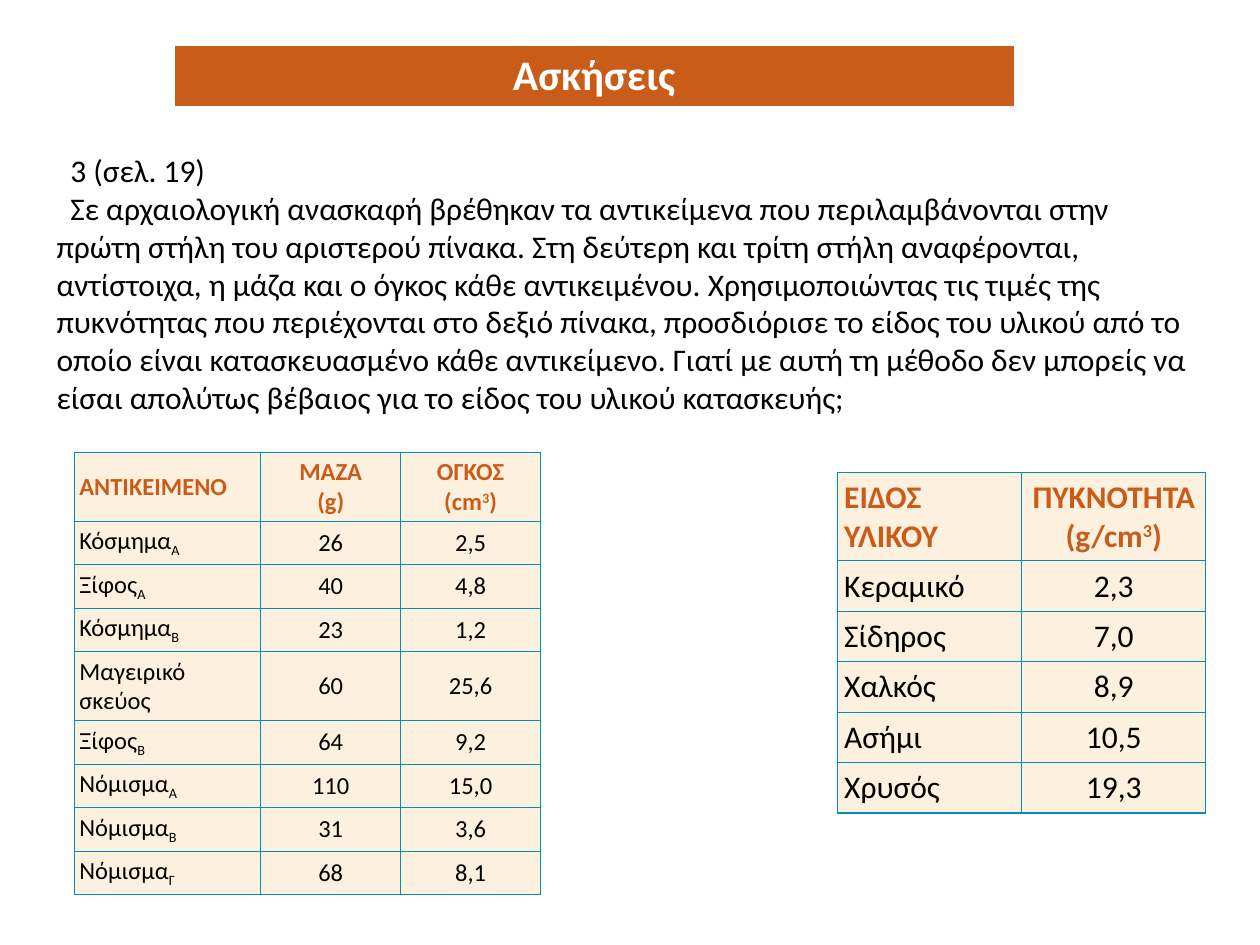
import pptx
import pptx.dml.color
import pptx.enum.text
import pptx.oxml
import pptx.oxml.ns
import pptx.util
from dataclasses import dataclass

Inches = pptx.util.Inches
Align = pptx.enum.text.PP_ALIGN


@dataclass(frozen=True)
class Theme:
    font: str = "Calibri"
    accent: str = "C85C18"
    cream: str = "FEF0DE"
    border: str = "0091B2"
    ink: str = "000000"
    white: str = "FFFFFF"
    title_size: int = 24
    body_size: int = 18
    small_size: int = 14
    border_width: float = 0.75
    superscript: int = 30000
    subscript: int = -25000


THEME = Theme()

# Content: a tuple cell alternates normal and raised (header) or lowered (body) text
TITLE = "Ασκήσεις"
EXERCISE = [
    "3 (σελ. 19)",
    "Σε αρχαιολογική ανασκαφή βρέθηκαν τα αντικείμενα που περιλαμβάνονται στην "
    "πρώτη στήλη του αριστερού πίνακα. Στη δεύτερη και τρίτη στήλη αναφέρονται, "
    "αντίστοιχα, η μάζα και ο όγκος κάθε αντικειμένου. Χρησιμοποιώντας τις τιμές της "
    "πυκνότητας που περιέχονται στο δεξιό πίνακα, προσδιόρισε το είδος του υλικού από το "
    "οποίο είναι κατασκευασμένο κάθε αντικείμενο. Γιατί με αυτή τη μέθοδο δεν μπορείς να "
    "είσαι απολύτως βέβαιος για το είδος του υλικού κατασκευής;",
]
OBJECTS = [
    ("ΑΝΤΙΚΕΙΜΕΝΟ", "ΜΑΖΑ\n(g)", ("ΟΓΚΟΣ\n(cm", "3", ")")),
    (("Κόσμημα", "Α"), "26", "2,5"),
    (("Ξίφος", "Α"), "40", "4,8"),
    (("Κόσμημα", "Β"), "23", "1,2"),
    ("Μαγειρικό σκεύος", "60", "25,6"),
    (("Ξίφος", "Β"), "64", "9,2"),
    (("Νόμισμα", "Α"), "110", "15,0"),
    (("Νόμισμα", "Β"), "31", "3,6"),
    (("Νόμισμα", "Γ"), "68", "8,1"),
]
MATERIALS = [
    ("ΕΙΔΟΣ ΥΛΙΚΟΥ", ("ΠΥΚΝΟΤΗΤΑ\n(g/cm", "3", ")")),
    ("Κεραμικό", "2,3"),
    ("Σίδηρος", "7,0"),
    ("Χαλκός", "8,9"),
    ("Ασήμι", "10,5"),
    ("Χρυσός", "19,3"),
]


def rgb(color):
    return pptx.dml.color.RGBColor.from_string(color)


def style_font(font, size, color, bold=False):
    font.name = THEME.font
    font.size = pptx.util.Pt(size)
    font.bold = bold
    font.color.rgb = rgb(color)


def add_borders(cell):
    properties = cell._tc.get_or_add_tcPr()
    width = pptx.util.Pt(THEME.border_width)
    for position, side in enumerate(("lnL", "lnR", "lnT", "lnB")):
        line = pptx.oxml.parse_xml(
            f'<a:{side} {pptx.oxml.ns.nsdecls("a")} w="{width}"><a:solidFill>'
            f'<a:srgbClr val="{THEME.border}"/></a:solidFill></a:{side}>')
        properties.insert(position, line)


def write_cell(cell, content, size, color, bold, shift):
    para = cell.text_frame.paragraphs[0]
    style_font(para.font, size, color, bold)
    pieces = (content,) if isinstance(content, str) else content
    for index, piece in enumerate(pieces):
        for line_number, line in enumerate(piece.split("\n")):
            if line_number:
                para.add_line_break()
            span = para.add_run()
            span.text = line
            style_font(span.font, size, color, bold)
            if index % 2:
                span.font._element.set("baseline", str(shift))
    return para


def add_table(page, rows, left, top, widths, heights, size, inset,
              header_color=THEME.accent, fill=THEME.cream, bordered=True):
    frame = page.shapes.add_table(
        len(rows), len(widths), Inches(left), Inches(top),
        Inches(sum(widths)), Inches(sum(heights)))
    table = frame.table
    table.first_row = table.horz_banding = False
    for column, width in zip(table.columns, widths):
        column.width = Inches(width)
    for row_index, (row, height) in enumerate(zip(rows, heights)):
        table.rows[row_index].height = Inches(height)
        header = row_index == 0
        color = header_color if header else THEME.ink
        shift = THEME.superscript if header else THEME.subscript
        for column_index, content in enumerate(row):
            cell = table.cell(row_index, column_index)
            cell.fill.solid()
            cell.fill.fore_color.rgb = rgb(fill)
            cell.vertical_anchor = pptx.enum.text.MSO_ANCHOR.MIDDLE
            cell.margin_left = cell.margin_right = Inches(inset)
            cell.margin_top = cell.margin_bottom = Inches(inset)
            para = write_cell(cell, content, size, color, header, shift)
            centred = column_index > 0 or len(row) == 1
            para.alignment = Align.CENTER if centred else Align.LEFT
            if bordered:
                add_borders(cell)


def add_exercise(page):
    box = page.shapes.add_textbox(Inches(0.35), Inches(1.15), Inches(9.21), Inches(2.22))
    box.text_frame.word_wrap = True
    for index, text in enumerate(EXERCISE):
        para = box.text_frame.paragraphs[0] if index == 0 else box.text_frame.add_paragraph()
        para.text = text
        para._p.get_or_add_pPr().set("indent", str(Inches(0.11)))
        style_font(para.font, THEME.body_size, THEME.ink)


def main():
    deck = pptx.Presentation()
    deck.slide_width, deck.slide_height = Inches(10), Inches(7.5)
    page = deck.slides.add_slide(deck.slide_layouts[6])

    # Exercise text and title band
    add_exercise(page)
    add_table(page, [(TITLE,)], 1.38, 0.36, [6.67], [0.49], THEME.title_size, 0.04,
              header_color=THEME.white, fill=THEME.accent, bordered=False)

    # Mass and volume of each object; two-line rows are taller
    tall_rows = (0, 4)
    heights = [0.54 if index in tall_rows else 0.34 for index in range(len(OBJECTS))]
    add_table(page, OBJECTS, 0.59, 3.59, [1.48, 1.11, 1.11], heights, THEME.small_size, 0.04)

    # Density of each material
    heights = [0.7] + [0.4] * (len(MATERIALS) - 1)
    add_table(page, MATERIALS, 6.65, 3.75, [1.46, 1.46], heights, THEME.body_size, 0.05)

    deck.save("out.pptx")


if __name__ == "__main__":
    main()
